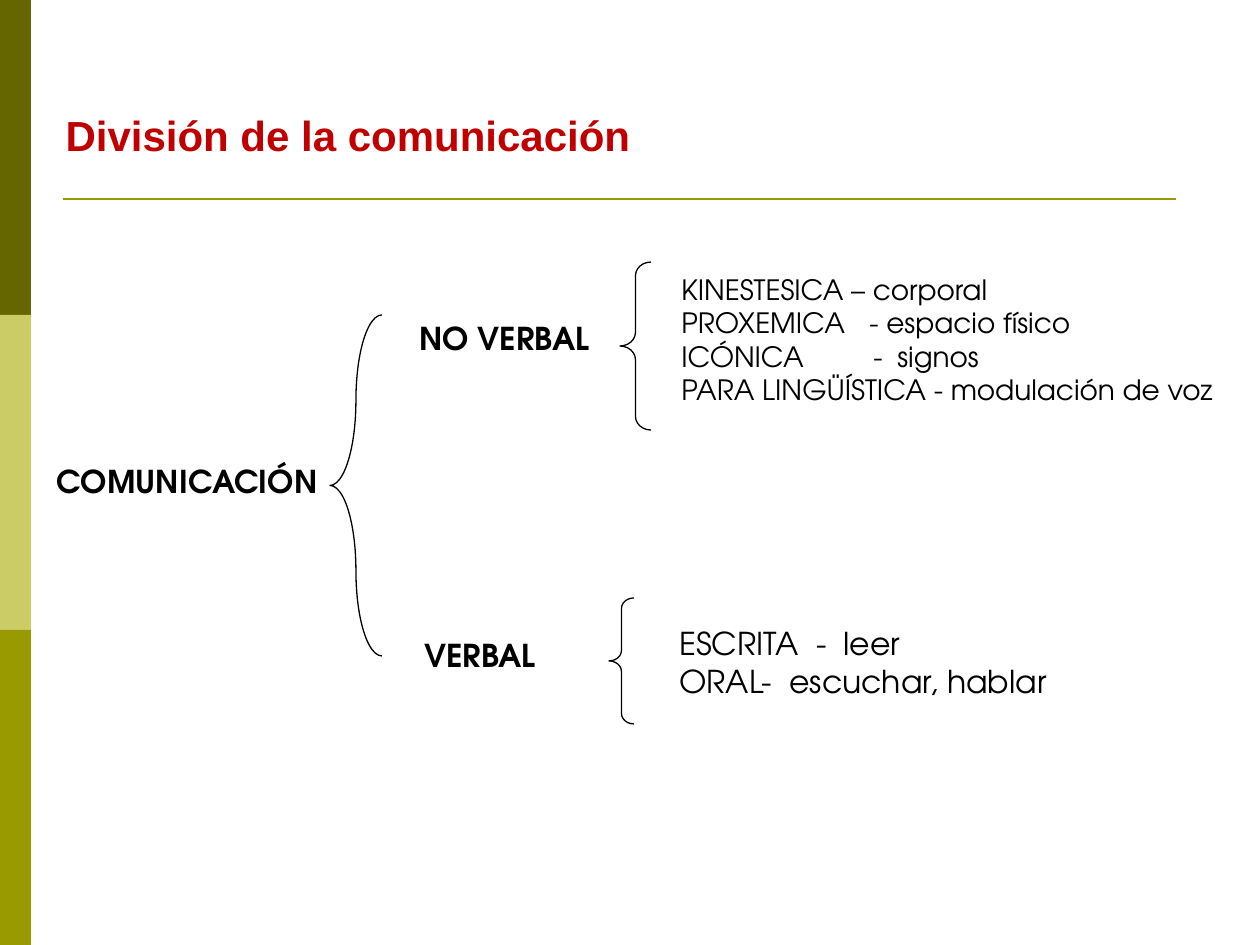
import pptx
import pptx.util
import pptx.dml.color
import pptx.enum.shapes
import pptx.enum.text
import pptx.oxml
import pptx.oxml.ns

SHAPE = pptx.enum.shapes.MSO_SHAPE
COLORS = {
    "dark": "666600",
    "light": "CCCC66",
    "olive": "999900",
    "title": "C00000",
    "text": "000000",
}


class Deck:
    scale = 914400 / 126
    font = "TeX Gyre Adventor"

    def __init__(self, width, height):
        self.prs = pptx.Presentation()
        self.prs.slide_width = self.px(width)
        self.prs.slide_height = self.px(height)
        self.s = self.prs.slides.add_slide(self.prs.slide_layouts[5])

    def px(self, n):
        return pptx.util.Emu(round(n * self.scale))

    def rgb(self, name):
        return pptx.dml.color.RGBColor.from_string(COLORS[name])

    def band(self, x, y, w, h, color):
        sp = self.s.shapes.add_shape(SHAPE.RECTANGLE, *map(self.px, (x, y, w, h)))
        sp.shadow.inherit = False
        sp.fill.solid()
        sp.fill.fore_color.rgb = self.rgb(color)
        sp.line.fill.background()

    def rule(self, x1, x2, y, color):
        line = self.s.shapes.add_connector(
            pptx.enum.shapes.MSO_CONNECTOR.STRAIGHT, *map(self.px, (x1, y, x2, y)))
        line.line.color.rgb = self.rgb(color)
        line.line.width = pptx.util.Pt(1.5)
        line._element.spPr.append(pptx.oxml.parse_xml(
            "<a:effectLst %s/>" % pptx.oxml.ns.nsdecls("a")))

    def brace(self, x, y, w, h, curve):
        sp = self.s.shapes.add_shape(SHAPE.LEFT_BRACE, *map(self.px, (x, y, w, h)))
        sp.adjustments[0] = curve
        sp.adjustments[1] = 0.5
        sp.shadow.inherit = False
        sp.fill.background()
        sp.line.color.rgb = self.rgb("text")
        sp.line.width = pptx.util.Pt(0.75)

    def run(self, p, text, size, font, color, bold):
        p.alignment = pptx.enum.text.PP_ALIGN.LEFT
        r = p.add_run()
        r.text = text
        r.font.size = pptx.util.Pt(size)
        r.font.name = font
        r.font.bold = bold
        r.font.color.rgb = self.rgb(color)

    def title(self, x, y, w, h, text):
        sp = self.s.shapes.title
        sp.left, sp.top, sp.width, sp.height = map(self.px, (x, y, w, h))
        tf = sp.text_frame
        tf.word_wrap = True
        tf.auto_size = pptx.enum.text.MSO_AUTO_SIZE.NONE
        tf.vertical_anchor = pptx.enum.text.MSO_ANCHOR.TOP
        self.run(tf.paragraphs[0], text, 24, "Arial", "title", True)

    def label(self, x, y, w, h, text):
        tf = self.s.shapes.add_textbox(*map(self.px, (x, y, w, h))).text_frame
        tf.word_wrap = False
        self.run(tf.paragraphs[0], text, 18, self.font, "text", True)

    def lines(self, x, y, w, h, size, rows):
        tf = self.s.shapes.add_textbox(*map(self.px, (x, y, w, h))).text_frame
        tf.word_wrap = True
        for i, (text, stops) in enumerate(rows):
            p = tf.add_paragraph() if i else tf.paragraphs[0]
            self.run(p, text, size, self.font, "text", False)
            if stops:
                self.tabs(p, stops)

    def tabs(self, p, stops):
        tabs = "".join('<a:tab pos="%d" algn="l"/>' % self.px(n) for n in stops)
        p._p.get_or_add_pPr().append(pptx.oxml.parse_xml(
            "<a:tabLst %s>%s</a:tabLst>" % (pptx.oxml.ns.nsdecls("a"), tabs)))


def main():
    d = Deck(1260, 945)
    for i, color in enumerate(("dark", "light", "olive")):
        d.band(0, i * 315, 31, 315, color)
    d.rule(63, 1176, 199, "olive")
    d.title(53, 103, 607, 63, "División de la comunicación")

    d.brace(330, 315, 52, 341, 1.66)
    d.brace(620, 262, 31, 168, 0.44)
    d.brace(609, 598, 25, 126, 0.42)

    d.label(44, 456, 293, 50, "COMUNICACIÓN")
    d.label(407, 313, 195, 50, "NO VERBAL")
    d.label(412, 630, 141, 50, "VERBAL")

    d.lines(669, 266, 576, 149, 16, [
        ("KINESTESICA – corporal", ()),
        ("PROXEMICA\t- espacio físico", (188,)),
        ("ICÓNICA\t-\tsignos", (192, 216)),
        ("PARA LINGÜÍSTICA - modulación de voz", ()),
    ])
    d.lines(667, 618, 556, 90, 18, [
        ("ESCRITA\t-\tleer", (137, 164)),
        ("ORAL-\tescuchar, hablar", (110,)),
    ])
    d.prs.save("out.pptx")


if __name__ == "__main__":
    main()
